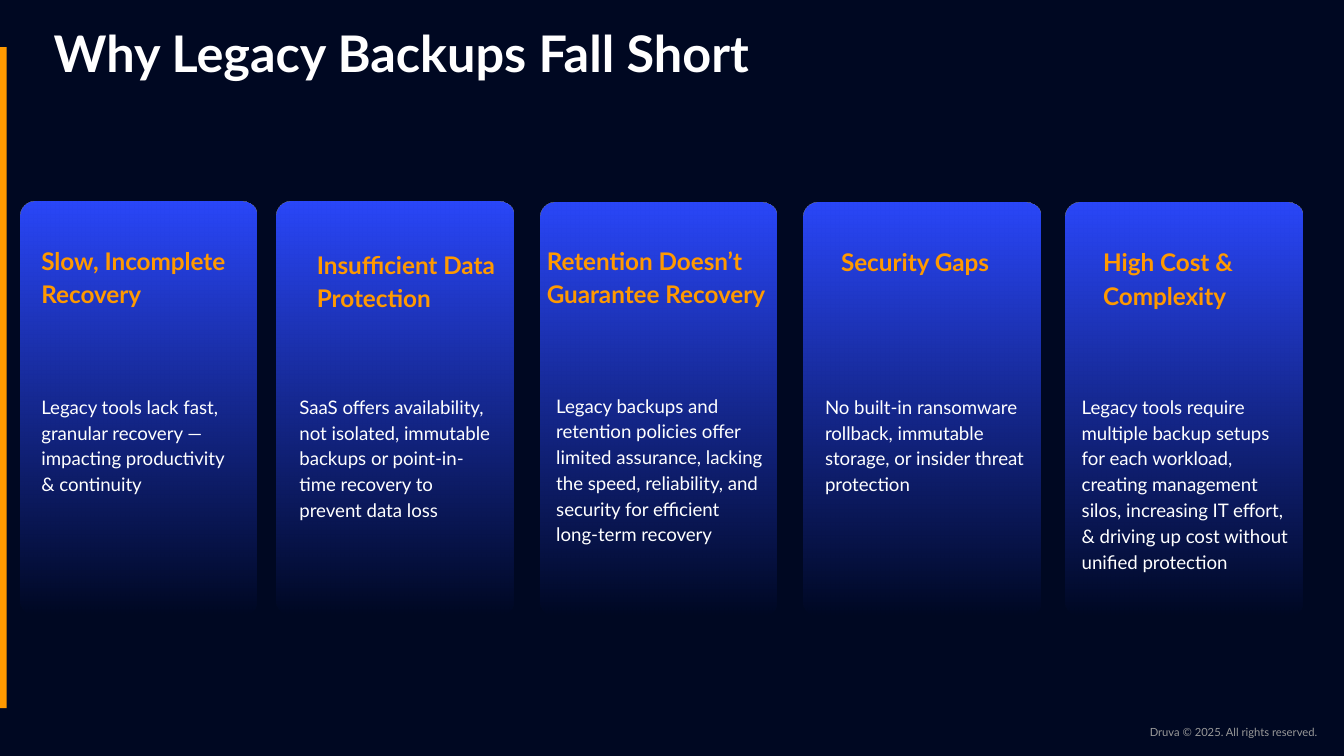
import pptx
import pptx.util
import pptx.dml.color
import pptx.enum.shapes
import pptx.enum.text
import pptx.oxml
import pptx.oxml.ns

Inches = pptx.util.Inches
Pt = pptx.util.Pt

COLORS = {"navy": "000822", "orange": "FF9900", "blue": "2A47F9",
          "white": "FFFFFF", "gray": "999999"}
FONT = "Lato"
SLIDE_WIDTH = Inches(10)
CARD_WIDTH, CARD_HEIGHT = 1.76, 3.07
PADDING = 0.1

TITLE = "Why Legacy Backups Fall Short"
FOOTER = "Druva © 2025. All rights reserved."

# Each card: (left, top), heading and its box, body and its box
CARDS = [
    ((0.15, 1.5),
     "Slow, Incomplete Recovery", (0.21, 1.7, 1.66, 0.7),
     "Legacy tools lack fast, granular recovery — impacting productivity "
     "& continuity", (0.21, 2.82, 1.66, 1.65)),
    ((2.06, 1.5),
     "Insufficient Data Protection", (2.26, 1.73, 1.55, 0.7),
     "SaaS offers availability, not isolated, immutable backups or "
     "point-in-time recovery to prevent data loss", (2.13, 2.82, 1.66, 1.14)),
    ((4.02, 1.51),
     "Retention Doesn’t Guarantee Recovery", (3.97, 1.7, 1.95, 0.7),
     "Legacy backups and retention policies offer limited assurance, lacking "
     "the speed, reliability, and security for efficient long-term recovery",
     (4.04, 2.81, 1.75, 2.79)),
    ((5.98, 1.51),
     "Security Gaps", (6.16, 1.71, 1.66, 0.45),
     "No built-in ransomware rollback, immutable storage, or insider threat "
     "protection", (6.04, 2.82, 1.71, 1.31)),
    ((7.93, 1.51),
     "High Cost & Complexity", (8.11, 1.71, 1.49, 0.7),
     "Legacy tools require multiple backup setups for each workload, creating "
     "management silos, increasing IT effort, & driving up cost without "
     "unified protection", (7.95, 2.82, 1.75, 2.8)),
]


def rgb(name):
    return pptx.dml.color.RGBColor.from_string(COLORS[name])


def add_text(slide, text, box, size, color, bold=False, padding=0.0,
             spacing=1.15, align=pptx.enum.text.PP_ALIGN.LEFT):
    frame = slide.shapes.add_textbox(*map(Inches, box)).text_frame
    frame.word_wrap = True
    frame.margin_left = frame.margin_right = Inches(padding)
    frame.margin_top = frame.margin_bottom = Inches(padding)
    paragraph = frame.paragraphs[0]
    paragraph.text = text
    paragraph.alignment = align
    paragraph.line_spacing = spacing
    paragraph.font.name = FONT
    paragraph.font.size = Pt(size)
    paragraph.font.bold = bold
    paragraph.font.color.rgb = rgb(color)


def add_shape(slide, kind, box):
    shape = slide.shapes.add_shape(kind, *map(Inches, box))
    shape.shadow.inherit = False
    shape.line.fill.background()
    return shape


def add_card(slide, left, top):
    card = add_shape(slide, pptx.enum.shapes.MSO_SHAPE.ROUNDED_RECTANGLE,
                     (left, top, CARD_WIDTH, CARD_HEIGHT))
    card.adjustments[0] = 0.06
    # Blue fading downward to fully transparent
    card.fill.gradient()
    card.fill.gradient_angle = 270
    for stop, position in zip(card.fill.gradient_stops, (0, 1)):
        stop.color.rgb = rgb("blue")
        stop.position = position
    fill_colors = card.element.spPr.findall(
        ".//" + pptx.oxml.ns.qn("a:srgbClr"))
    fill_colors[-1].append(pptx.oxml.parse_xml(
        "<a:alpha %s val='0'/>" % pptx.oxml.ns.nsdecls("a")))


def main():
    presentation = pptx.Presentation()
    # Widescreen, 16:9
    presentation.slide_width = SLIDE_WIDTH
    presentation.slide_height = SLIDE_WIDTH * 9 // 16
    slide = presentation.slides.add_slide(presentation.slide_layouts[6])
    slide.background.fill.solid()
    slide.background.fill.fore_color.rgb = rgb("navy")

    # Accent bar, footer and title
    bar = add_shape(slide, pptx.enum.shapes.MSO_SHAPE.RECTANGLE,
                    (0, 0.35, 0.05, 4.92))
    bar.fill.solid()
    bar.fill.fore_color.rgb = rgb("orange")
    add_text(slide, FOOTER, (7.8, 5.4, 2, 0.1), 6, "gray", spacing=1.0,
             align=pptx.enum.text.PP_ALIGN.RIGHT)
    add_text(slide, TITLE, (0.4, 0.1, 9.2, 0.45), 27, "white", bold=True)

    # Problem cards
    for corner, heading, heading_box, body, body_box in CARDS:
        add_card(slide, *corner)
        add_text(slide, heading, heading_box, 13, "orange", bold=True,
                 padding=PADDING)
        add_text(slide, body, body_box, 10, "white", padding=PADDING)

    presentation.save("out.pptx")


if __name__ == "__main__":
    main()
